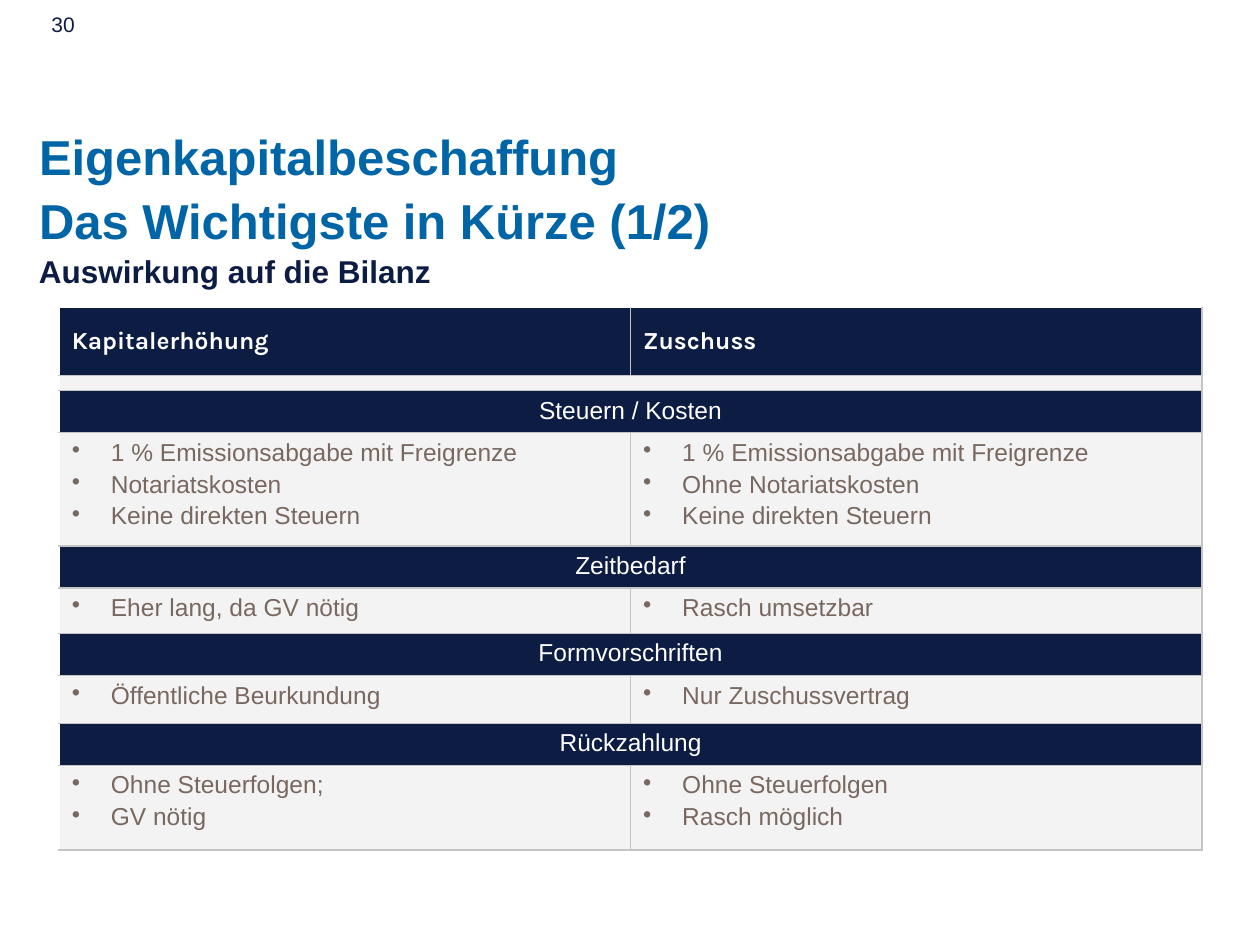
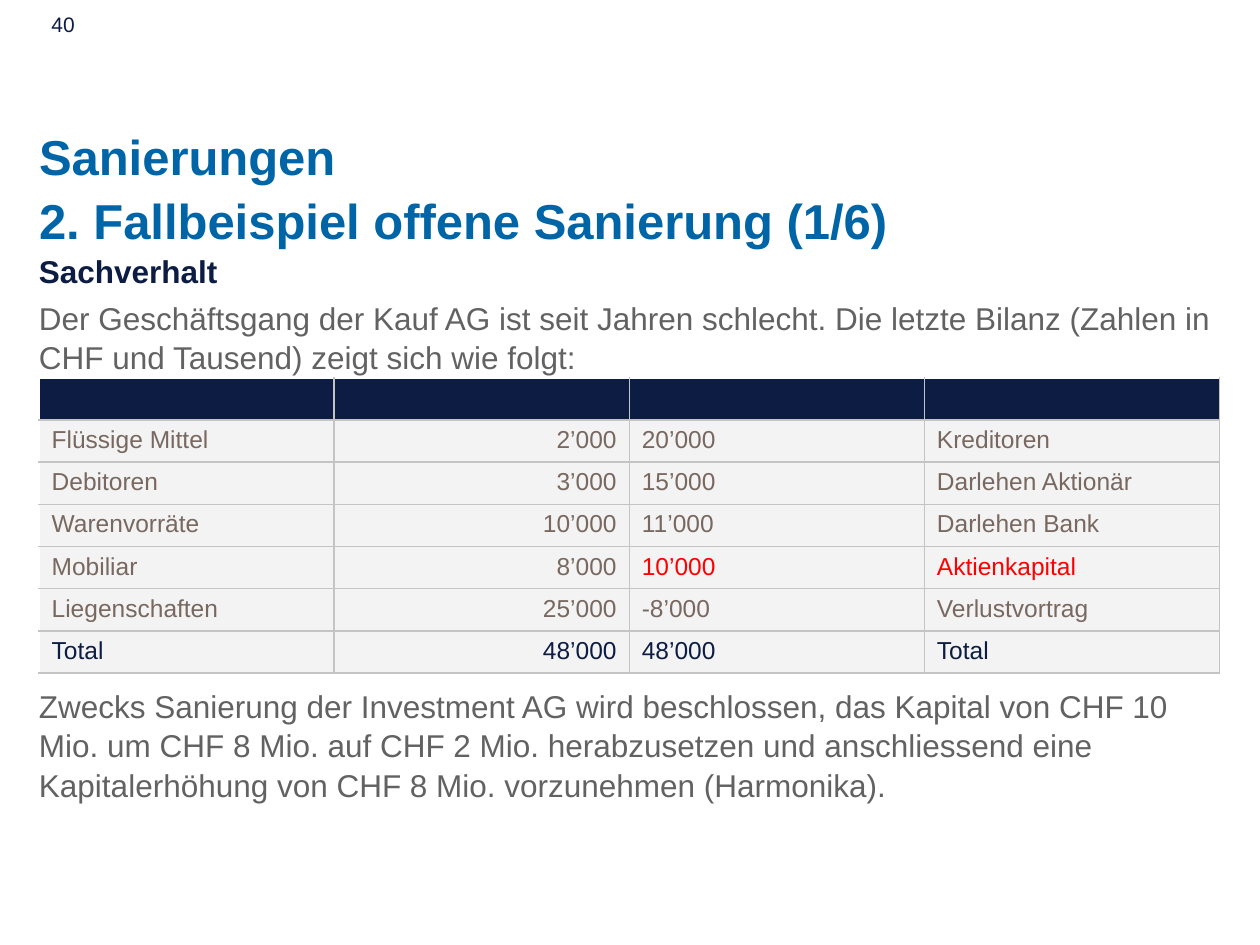
from dataclasses import dataclass

from lxml import etree
from pptx import Presentation
from pptx.dml.color import RGBColor
from pptx.enum import text as t
from pptx.oxml import ns
from pptx.util import Inches, Pt


@dataclass(frozen=True)
class Theme:
    navy: str = "0C1C43"
    blue: str = "0065A6"
    gray: str = "626262"
    brown: str = "786860"
    red: str = "FF0000"
    white: str = "FFFFFF"
    pale: str = "F3F3F3"
    line: str = "C4C4C4"
    font: str = "Arial"
    head: str = "Karla"
    title: int = 28
    body: int = 18
    cell: int = 14
    page: int = 12
    gap: int = 1


TH = Theme()
LEFT, WIDTH = 0.31, 9.37
RIGHT, CENTER = t.PP_ALIGN.RIGHT, t.PP_ALIGN.CENTER

# Content: comparison of capital increase and contribution
EQUITY = {
    "page": "30",
    "title": "Eigenkapitalbeschaffung\vDas Wichtigste in Kürze (1/2)",
    "lead": ["Auswirkung auf die Bilanz"],
}
HEADS = ["Kapitalerhöhung", "Zuschuss"]
# Topic, banner height, bullet height, bullets per column
TOPICS = [
    ("Steuern / Kosten", 0.32, 0.9,
     (["1 % Emissionsabgabe mit Freigrenze", "Notariatskosten", "Keine direkten Steuern"],
      ["1 % Emissionsabgabe mit Freigrenze", "Ohne Notariatskosten", "Keine direkten Steuern"])),
    ("Zeitbedarf", 0.32, 0.36, (["Eher lang, da GV nötig"], ["Rasch umsetzbar"])),
    ("Formvorschriften", 0.32, 0.38, (["Öffentliche Beurkundung"], ["Nur Zuschussvertrag"])),
    ("Rückzahlung", 0.33, 0.67,
     (["Ohne Steuerfolgen;", "GV nötig"], ["Ohne Steuerfolgen", "Rasch möglich"])),
]

# Content: balance sheet of the case
CASE = {
    "page": "40",
    "title": "Sanierungen\v2. Fallbeispiel offene Sanierung (1/6)",
    "lead": ["Sachverhalt",
             "Der Geschäftsgang der Kauf AG ist seit Jahren schlecht. Die letzte Bilanz "
             "(Zahlen in CHF und Tausend) zeigt sich wie folgt:"],
}
PLAN = ("Zwecks Sanierung der Investment AG wird beschlossen, das Kapital von CHF 10 Mio. "
        "um CHF 8 Mio. auf CHF 2 Mio. herabzusetzen und anschliessend eine "
        "Kapitalerhöhung von CHF 8 Mio. vorzunehmen (Harmonika).")
SHEET = [
    ("Flüssige Mittel", "2’000", "20’000", "Kreditoren"),
    ("Debitoren", "3’000", "15’000", "Darlehen Aktionär"),
    ("Warenvorräte", "10’000", "11’000", "Darlehen Bank"),
    ("Mobiliar", "8’000", "10’000", "Aktienkapital"),
    ("Liegenschaften", "25’000", "-8’000", "Verlustvortrag"),
    ("Total", "48’000", "48’000", "Total"),
]


# Text helpers
def style(para, size, color, bold=False, font=TH.font):
    for run in para.runs:
        run.font.size, run.font.bold, run.font.name = Pt(size), bold, font
        run.font.color.rgb = RGBColor.from_string(color)


def add_box(slide, top, height, lines, left=LEFT, width=WIDTH, pad=0.0):
    frame = slide.shapes.add_textbox(*map(Inches, (left, top, width, height))).text_frame
    frame.word_wrap = True
    frame.margin_left = frame.margin_right = Inches(pad)
    frame.margin_top = frame.margin_bottom = Inches(pad / 2)
    frame.text = "\n".join(lines)
    return frame


def add_prose(slide, top, height, lines, lead=True):
    frame = add_box(slide, top, height, lines)
    for i, para in enumerate(frame.paragraphs):
        first = lead and i == 0
        style(para, TH.body, TH.navy if first else TH.gray, first)
        para.line_spacing = 1.04
        if i:
            para.space_before = Pt(4)


def add_slide(deck, info):
    slide = deck.slides.add_slide(deck.slide_layouts[5])
    title = slide.shapes.title
    title.left, title.top, title.width, title.height = map(Inches, (LEFT, 0.96, WIDTH, 1.06))
    frame = title.text_frame
    frame.text = info["title"]
    frame.margin_left = frame.margin_right = frame.margin_top = frame.margin_bottom = 0
    frame.vertical_anchor = t.MSO_ANCHOR.TOP
    frame.auto_size = t.MSO_AUTO_SIZE.NONE
    para = frame.paragraphs[0]
    para.alignment, para.line_spacing = t.PP_ALIGN.LEFT, 1.09
    style(para, TH.title, TH.blue, True)
    add_prose(slide, 1.99, 0.98 if len(info["lead"]) > 1 else 0.35, info["lead"])
    page = add_box(slide, 0.04, 0.29, [info["page"]], width=2.33, pad=0.1)
    style(page.paragraphs[0], TH.page, TH.navy)
    return slide


# Table helpers
def add_table(slide, left, top, width, count, rows):
    shape = slide.shapes.add_table(len(rows), count, *map(Inches, (left, top, width, sum(rows))))
    table = shape.table
    table.first_row = table.horz_banding = False
    for row, high in zip(table.rows, rows):
        row.height = Inches(high)
    return table


def add_edges(cell, sides):
    props = cell._tc.get_or_add_tcPr()
    for i, side in enumerate(sides):
        edge = etree.Element(ns.qn("a:ln" + side), w=str(Pt(1)))
        fill = etree.SubElement(edge, ns.qn("a:solidFill"))
        etree.SubElement(fill, ns.qn("a:srgbClr"), val=TH.line)
        props.insert(i, edge)


def paint(table, dark):
    for r, row in enumerate(table.rows):
        for c, cell in enumerate(row.cells):
            cell.fill.solid()
            cell.fill.fore_color.rgb = RGBColor.from_string(TH.navy if r in dark else TH.pale)
            add_edges(cell, ("L" if c else "") + "R" + ("T" if r else "") + "B")


def fill_cell(cell, lines, color, align=None, bullet=False, **look):
    cell.text = "\n".join(lines)
    for i, para in enumerate(cell.text_frame.paragraphs):
        if bullet:
            props = para._p.get_or_add_pPr()
            props.set("marL", str(Inches(0.31)))
            props.set("indent", str(-Inches(0.31)))
            etree.SubElement(props, ns.qn("a:buChar"), char="•")
        if i:
            para.space_before = Pt(2.5)
        para.alignment = align
        style(para, TH.cell, color, **look)


def set_empty(cell, size):
    para = cell.text_frame.paragraphs[0]._p
    etree.SubElement(para, ns.qn("a:endParaRPr"), sz=str(size * 100))


def build_equity(deck):
    slide = add_slide(deck, EQUITY)
    rows = [0.54, 0.12] + [high for topic in TOPICS for high in topic[1:3]]
    table = add_table(slide, 0.47, 2.44, 9.07, 2, rows)
    banners = range(2, len(rows), 2)
    paint(table, {0, *banners})
    for c, head in enumerate(HEADS):
        cell = table.cell(0, c)
        fill_cell(cell, [head], TH.white, bold=True, font=TH.head)
        cell.vertical_anchor = t.MSO_ANCHOR.MIDDLE
        set_empty(table.cell(1, c), TH.gap)
    for r in (1, *banners):
        table.cell(r, 0).merge(table.cell(r, 1))
    for r, (name, _, _, points) in zip(banners, TOPICS):
        fill_cell(table.cell(r, 0), [name], TH.white, CENTER)
        for c, lines in enumerate(points):
            fill_cell(table.cell(r + 1, c), lines, TH.brown, bullet=True)


def build_case(deck):
    slide = add_slide(deck, CASE)
    table = add_table(slide, LEFT, 3, WIDTH, 4, [0.33] + [0.335] * len(SHEET))
    paint(table, {0})
    for c in range(4):
        set_empty(table.cell(0, c), TH.cell)
    for r, row in enumerate(SHEET, 1):
        for c, word in enumerate(row):
            color = TH.navy if row[0] == "Total" else TH.brown
            if row[3] == "Aktienkapital" and c > 1:
                color = TH.red
            fill_cell(table.cell(r, c), [word], color, RIGHT if c == 1 else None)
    add_prose(slide, 5.44, 0.95, [PLAN], lead=False)


def main():
    deck = Presentation()
    deck.slide_width, deck.slide_height = Inches(10), Inches(7.5)
    build_equity(deck)
    build_case(deck)
    deck.save("out.pptx")


if __name__ == "__main__":
    main()
